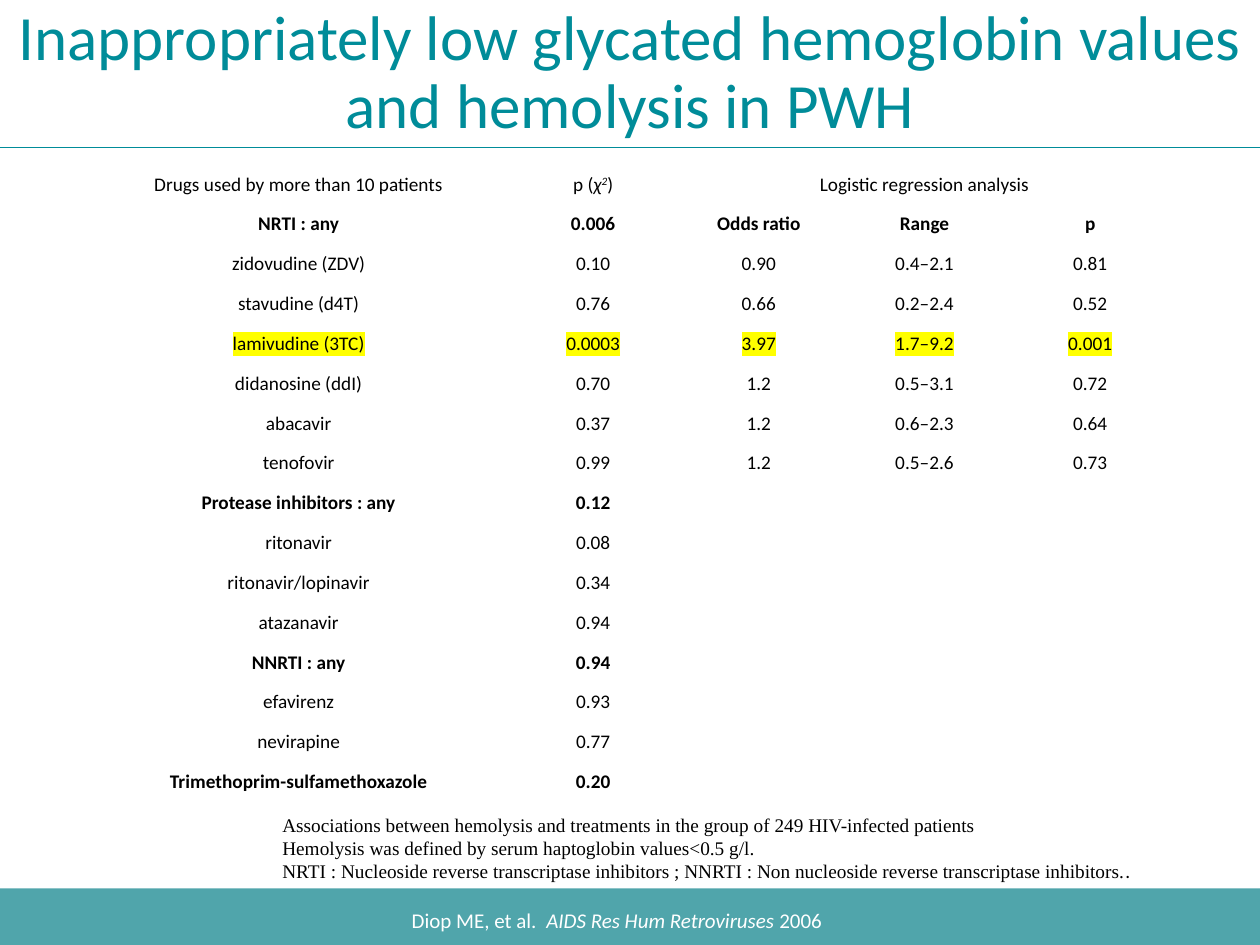
"""Build the slide on glycated hemoglobin and hemolysis in PWH."""
from dataclasses import dataclass
from typing import Optional, Sequence

from lxml import etree
from pptx import Presentation
from pptx import util as u
from pptx.dml.color import RGBColor
from pptx.enum import shapes, text
from pptx.oxml.ns import qn

PX = 9144
TEAL, BAR, BLACK, WHITE, YELLOW = "008C99", "50A5AB", "000000", "FFFFFF", "FFFF00"
SANS, SERIF = "Calibri", "Times New Roman"
CENTER, LEFT = text.PP_ALIGN.CENTER, text.PP_ALIGN.LEFT


@dataclass(frozen=True)
class Run:
    text: str
    italic: Optional[bool] = None
    raised: bool = False
    font: Optional[str] = None
    highlight: Optional[str] = None


@dataclass(frozen=True)
class Style:
    size: int
    color: str
    font: str = SANS
    align: text.PP_ALIGN = CENTER
    bold: bool = False
    spacing: Optional[float] = None


@dataclass(frozen=True)
class Box:
    at: tuple[int, int, int, int]
    style: Style
    paragraphs: Sequence[Sequence[Run]]
    anchor: text.MSO_ANCHOR = text.MSO_ANCHOR.TOP
    insets: tuple[int, int, int, int] = (10, 5, 10, 5)


@dataclass(frozen=True)
class Row:
    cells: Sequence[str]
    bold: bool = False
    highlight: Optional[str] = None


BOXES = [
    Box((0, 0, 1000, 117), Style(36, TEAL, spacing=0.9),
        [[Run("Inappropriately low glycated hemoglobin values and hemolysis in PWH")]],
        text.MSO_ANCHOR.MIDDLE),
    Box((224, 623, 691, 89), Style(11, BLACK, SERIF, LEFT),
        [[Run("Associations between hemolysis and treatments in the group of 249 HIV-infected patients")],
         [Run("Hemolysis was defined by serum haptoglobin values<0.5 g/l.")],
         [Run("NRTI : Nucleoside reverse transcriptase inhibitors ; "
              "NNRTI : Non nucleoside reverse transcriptase inhibitors."),
          Run(".", font=SANS)]],
        text.MSO_ANCHOR.MIDDLE, (0, 22, 0, 11)),
    Box((144, 715, 691, 30), Style(12, WHITE),
        [[Run("Diop ME, et al.  "), Run("AIDS Res Hum Retroviruses ", italic=True), Run("2006")]]),
]

HEADER = [
    [Run("Drugs used by more than 10 patients")],
    [Run("p ("), Run("χ", italic=True), Run("2", italic=True, raised=True), Run(")")],
    [Run("Logistic regression analysis")],
]
ROWS = [
    Row(("NRTI : any", "0.006", "Odds ratio", "Range", "p"), bold=True),
    Row(("zidovudine (ZDV)", "0.10", "0.90", "0.4–2.1", "0.81")),
    Row(("stavudine (d4T)", "0.76", "0.66", "0.2–2.4", "0.52")),
    Row(("lamivudine (3TC)", "0.0003", "3.97", "1.7–9.2", "0.001"), highlight=YELLOW),
    Row(("didanosine (ddI)", "0.70", "1.2", "0.5–3.1", "0.72")),
    Row(("abacavir", "0.37", "1.2", "0.6–2.3", "0.64")),
    Row(("tenofovir", "0.99", "1.2", "0.5–2.6", "0.73")),
    Row(("Protease inhibitors : any", "0.12"), bold=True),
    Row(("ritonavir", "0.08")),
    Row(("ritonavir/lopinavir", "0.34")),
    Row(("atazanavir", "0.94")),
    Row(("NNRTI : any", "0.94"), bold=True),
    Row(("efavirenz", "0.93")),
    Row(("nevirapine", "0.77")),
    Row(("Trimethoprim-sulfamethoxazole", "0.20"), bold=True),
]


def rgb(color: str) -> RGBColor:
    return RGBColor.from_string(color)


def px(values: Sequence[int]) -> list[int]:
    return [value * PX for value in values]


def write(p, runs: Sequence[Run], style: Style) -> None:
    p.alignment = style.align
    if style.spacing:
        p.line_spacing = style.spacing
    p.font.size = u.Pt(style.size)
    p.font.name = style.font
    p.font.bold = style.bold
    p.font.color.rgb = rgb(style.color)
    for run in runs:
        r = p.add_run()
        r.text = run.text
        r.font.italic = run.italic
        if run.raised:
            r.font._element.set("baseline", "30000")
        if run.highlight:
            mark = etree.SubElement(r.font._element, qn("a:highlight"))
            etree.SubElement(mark, qn("a:srgbClr")).set("val", run.highlight)
        if run.font:
            r.font.name = run.font
    if not runs:
        p._p.get_or_add_endParaRPr().set("sz", str(style.size * 100))


def draw_box(s, box: Box) -> None:
    tf = s.shapes.add_textbox(*px(box.at)).text_frame
    tf.word_wrap = True
    tf.vertical_anchor = box.anchor
    tf.margin_left, tf.margin_top, tf.margin_right, tf.margin_bottom = px(box.insets)
    for i, runs in enumerate(box.paragraphs):
        write(tf.add_paragraph() if i else tf.paragraphs[0], runs, box.style)


def draw_frame(s) -> None:
    sp = s.shapes.add_shape(shapes.MSO_SHAPE.RECTANGLE, *px((0, 705, 1000, 45)))
    sp.shadow.inherit = False
    sp.fill.solid()
    sp.fill.fore_color.rgb = rgb(BAR)
    sp.line.fill.background()
    line = s.shapes.add_connector(shapes.MSO_CONNECTOR.STRAIGHT, *px((0, 117, 1000, 117)))
    line.line.color.rgb = rgb(TEAL)
    line.line.width = u.Pt(0.5)
    etree.SubElement(line._element.spPr, qn("a:effectLst"))


def draw_cell(cell, runs: Sequence[Run], bold: bool) -> None:
    cell.fill.background()
    cell.margin_left = cell.margin_right = 6 * PX
    cell.margin_top = cell.margin_bottom = 3 * PX
    write(cell.text_frame.paragraphs[0], runs, Style(11, BLACK, bold=bold))


def draw_table(s) -> None:
    left, top, width, height = px((69, 134, 862, 506))
    first = 336 * PX
    count = len(ROWS) + 1
    table = s.shapes.add_table(count, 5, left, top, width, height).table
    table.first_row = table.horz_banding = False
    for i, column in enumerate(table.columns):
        column.width = (width - first) // 4 if i else first
    for row in table.rows:
        row.height = height // count
    table.cell(0, 2).merge(table.cell(0, 4))
    lines = [(HEADER, False)]
    lines += [([[Run(t, highlight=row.highlight)] for t in row.cells], row.bold) for row in ROWS]
    for y, (cells, bold) in enumerate(lines):
        for x in range(5):
            draw_cell(table.cell(y, x), cells[x] if x < len(cells) else [], bold)


def main() -> None:
    prs = Presentation()
    prs.slide_width, prs.slide_height = px((1000, 750))
    s = prs.slides.add_slide(prs.slide_layouts[6])
    draw_frame(s)
    for box in BOXES:
        draw_box(s, box)
    draw_table(s)
    prs.save("out.pptx")


if __name__ == "__main__":
    main()
